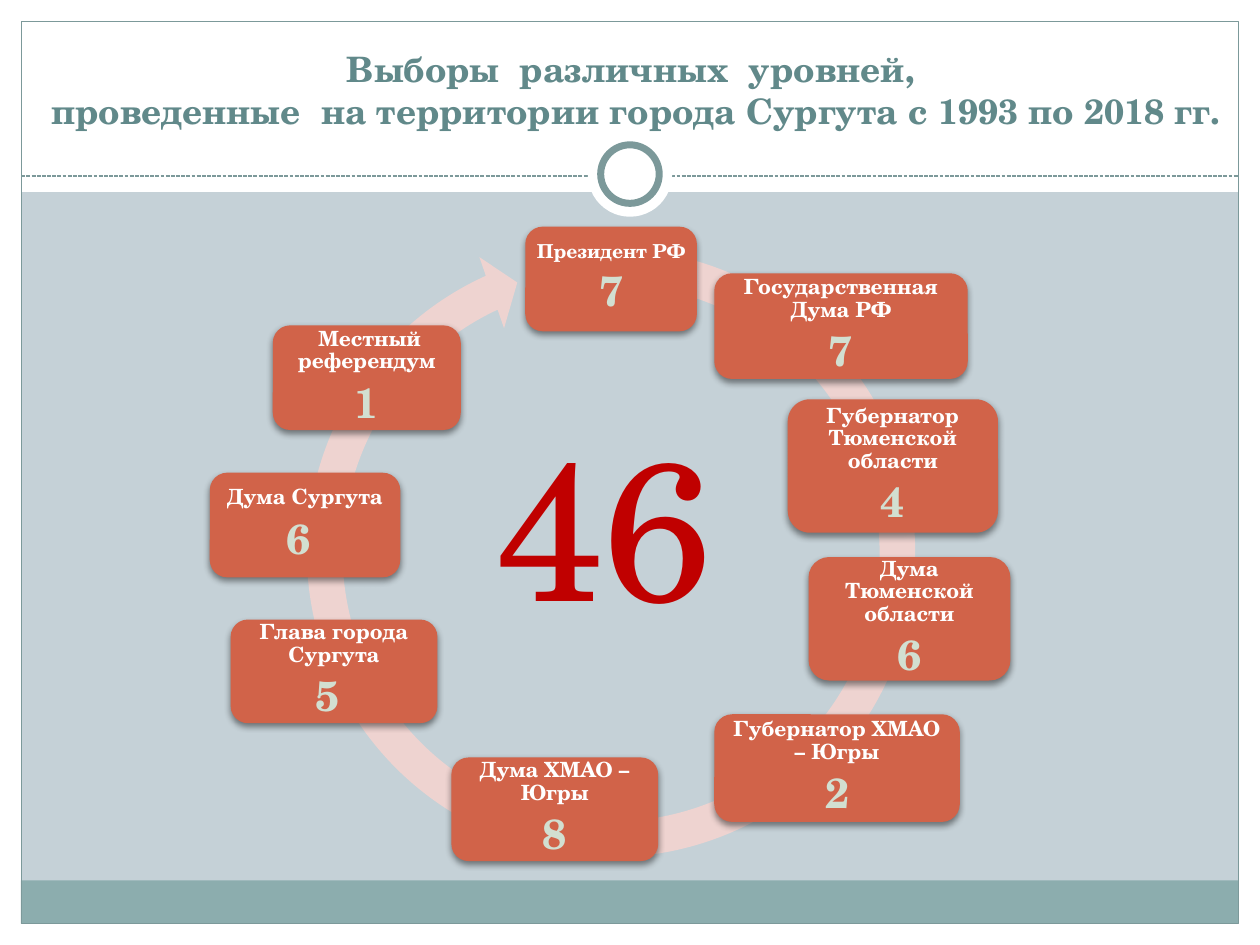
import dataclasses
import typing

import lxml.etree
import pptx
import pptx.dml.color
import pptx.enum.dml
import pptx.enum.shapes
import pptx.enum.text
import pptx.oxml.ns
import pptx.util

Cm = pptx.util.Cm
Pt = pptx.util.Pt
RGBColor = pptx.dml.color.RGBColor
Shape = pptx.enum.shapes.MSO_SHAPE
Align = pptx.enum.text.PP_ALIGN
Anchor = pptx.enum.text.MSO_ANCHOR

FONT = "TeX Gyre Schola"
WHITE = RGBColor(0xFF, 0xFF, 0xFF)
BACKGROUND = RGBColor(0xC5, 0xD1, 0xD7)
FOOTER = RGBColor(0x8C, 0xAD, 0xAE)
BORDER = RGBColor(0x7C, 0x99, 0x9A)
TITLE = RGBColor(0x61, 0x89, 0x8A)
RING = RGBColor(0xEE, 0xD3, 0xD0)
CARD = RGBColor(0xD1, 0x63, 0x49)
COUNT = RGBColor(0xD2, 0xDF, 0xD1)
TOTAL = RGBColor(0xC0, 0x00, 0x00)


@dataclasses.dataclass(frozen=True)
class Panel:
    left: float
    top: float
    width: float
    height: float
    fill: typing.Optional[RGBColor] = WHITE
    line_width: float = 0
    kind: typing.Any = Shape.RECTANGLE


@dataclasses.dataclass(frozen=True)
class Election:
    label: str
    count: str
    left: float
    top: float
    width: float
    height: float
    label_size: float = 12


PANELS = [
    Panel(0, 18.62, 25.4, 0.43),
    Panel(0, 0, 25.4, 3.87),
    Panel(0, 0, 0.43, 19.05),
    Panel(24.97, 0, 0.43, 19.05),
    Panel(0.42, 17.75, 24.54, 0.87, FOOTER),
    Panel(0.43, 0.43, 24.54, 18.19, None, 0.75),
]
CIRCLES = [
    Panel(11.85, 2.67, 1.7, 1.7, kind=Shape.OVAL),
    Panel(12.11, 2.92, 1.18, 1.18, WHITE, 4, Shape.OVAL),
]
ELECTIONS = [
    Election("Президент РФ", "7", 10.59, 4.57, 3.46, 2.11, 11),
    Election("Государственная Дума РФ", "7", 14.4, 5.51, 5.11, 2.13),
    Election("Губернатор Тюменской области", "4", 15.88, 8.05, 4.24, 2.69),
    Election("Дума Тюменской области", "6", 16.3, 11.23, 4.07, 2.49),
    Election("Губернатор ХМАО – Югры", "2", 14.4, 14.4, 4.95, 2.17),
    Election("Дума ХМАО – Югры", "8", 9.1, 15.27, 4.17, 2.09),
    Election("Глава города Сургута", "5 ", 4.65, 12.49, 4.17, 2.09),
    Election("Дума Сургута", "6 ", 4.23, 9.53, 3.84, 2.11),
    Election(" Местный референдум", "1", 5.5, 6.56, 3.79, 2.11),
]


def set_font(para, size: float, color: RGBColor, bold: bool = True) -> None:
    font = para.font
    font.name = FONT
    font.size = Pt(size)
    font.bold = bold
    font.color.rgb = color


def add_effects(shape):
    properties = shape._element.spPr
    return lxml.etree.SubElement(properties, pptx.oxml.ns.qn("a:effectLst"))


def add_soft_shadow(shape) -> None:
    qn = pptx.oxml.ns.qn
    shadow = lxml.etree.SubElement(
        add_effects(shape), qn("a:outerShdw"),
        blurRad=str(Pt(4)), dist=str(Pt(2)), dir="5400000", rotWithShape="0",
    )
    color = lxml.etree.SubElement(shadow, qn("a:srgbClr"), val="000000")
    lxml.etree.SubElement(color, qn("a:alpha"), val="45000")


def add_panel(page, panel: Panel):
    shape = page.shapes.add_shape(
        panel.kind, Cm(panel.left), Cm(panel.top), Cm(panel.width), Cm(panel.height)
    )
    if panel.fill is None:
        shape.fill.background()
    else:
        shape.fill.solid()
        shape.fill.fore_color.rgb = panel.fill
    if panel.line_width:
        shape.line.color.rgb = BORDER
        shape.line.width = Pt(panel.line_width)
    else:
        shape.line.fill.background()
    return shape


def add_flat_panel(page, panel: Panel):
    shape = add_panel(page, panel)
    shape.shadow.inherit = False
    return shape


def add_divider(page) -> None:
    divider = page.shapes.add_connector(
        pptx.enum.shapes.MSO_CONNECTOR.STRAIGHT, Cm(0.43), Cm(3.55), Cm(24.97), Cm(3.55)
    )
    divider.line.color.rgb = BORDER
    divider.line.width = Pt(0.75)
    divider.line.dash_style = pptx.enum.dml.MSO_LINE.SQUARE_DOT
    add_effects(divider)


def add_title(page) -> None:
    title = page.shapes.title
    page.shapes._spTree.append(title._element)
    title.left, title.top, title.width, title.height = Cm(0.43), Cm(0.43), Cm(24.77), Cm(2.34)
    frame = title.text_frame
    frame.auto_size = pptx.enum.text.MSO_AUTO_SIZE.NONE
    frame.vertical_anchor = Anchor.BOTTOM
    para = frame.paragraphs[0]
    para.text = (
        "Выборы  различных  уровней, \v"
        "проведенные  на территории города Сургута с 1993 по 2018 гг."
    )
    para.alignment = Align.CENTER
    set_font(para, 20, TITLE)


def add_ring(page) -> None:
    ring = add_flat_panel(
        page, Panel(5.79, 4.62, 13.06, 13.06, RING, kind=Shape.CIRCULAR_ARROW)
    )
    for index, value in enumerate([0.055, 3.307, 147.222, 168.33, 0.058]):
        ring.adjustments[index] = value


def add_election(page, election: Election) -> None:
    card = add_panel(page, Panel(
        election.left, election.top, election.width, election.height,
        CARD, kind=Shape.ROUNDED_RECTANGLE,
    ))
    add_soft_shadow(card)
    frame = card.text_frame
    frame.word_wrap = True
    frame.vertical_anchor = Anchor.MIDDLE
    frame.margin_left = frame.margin_right = Cm(0.12)
    frame.margin_top = frame.margin_bottom = Cm(0.12)
    lines = [
        (election.label, election.label_size, WHITE),
        (election.count, 24, COUNT),
    ]
    for index, (text, size, color) in enumerate(lines):
        para = frame.add_paragraph() if index else frame.paragraphs[0]
        para.text = text
        para.alignment = Align.CENTER
        para.line_spacing = 0.9
        para.space_after = Pt(size * 0.4)
        set_font(para, size, color)


def add_total(page) -> None:
    box = page.shapes.add_textbox(Cm(9.73), Cm(8.05), Cm(5.72), Cm(5.05))
    box.text_frame.word_wrap = True
    para = box.text_frame.paragraphs[0]
    para.text = "46"
    set_font(para, 112, TOTAL, bold=False)


def main() -> None:
    deck = pptx.Presentation()
    deck.slide_width, deck.slide_height = Cm(25.4), Cm(19.05)
    page = deck.slides.add_slide(deck.slide_layouts[5])
    page.background.fill.solid()
    page.background.fill.fore_color.rgb = BACKGROUND
    for panel in PANELS:
        add_flat_panel(page, panel)
    add_divider(page)
    for circle in CIRCLES:
        add_flat_panel(page, circle)
    add_title(page)
    add_ring(page)
    for election in ELECTIONS:
        add_election(page, election)
    add_total(page)
    deck.save("out.pptx")


if __name__ == "__main__":
    main()
